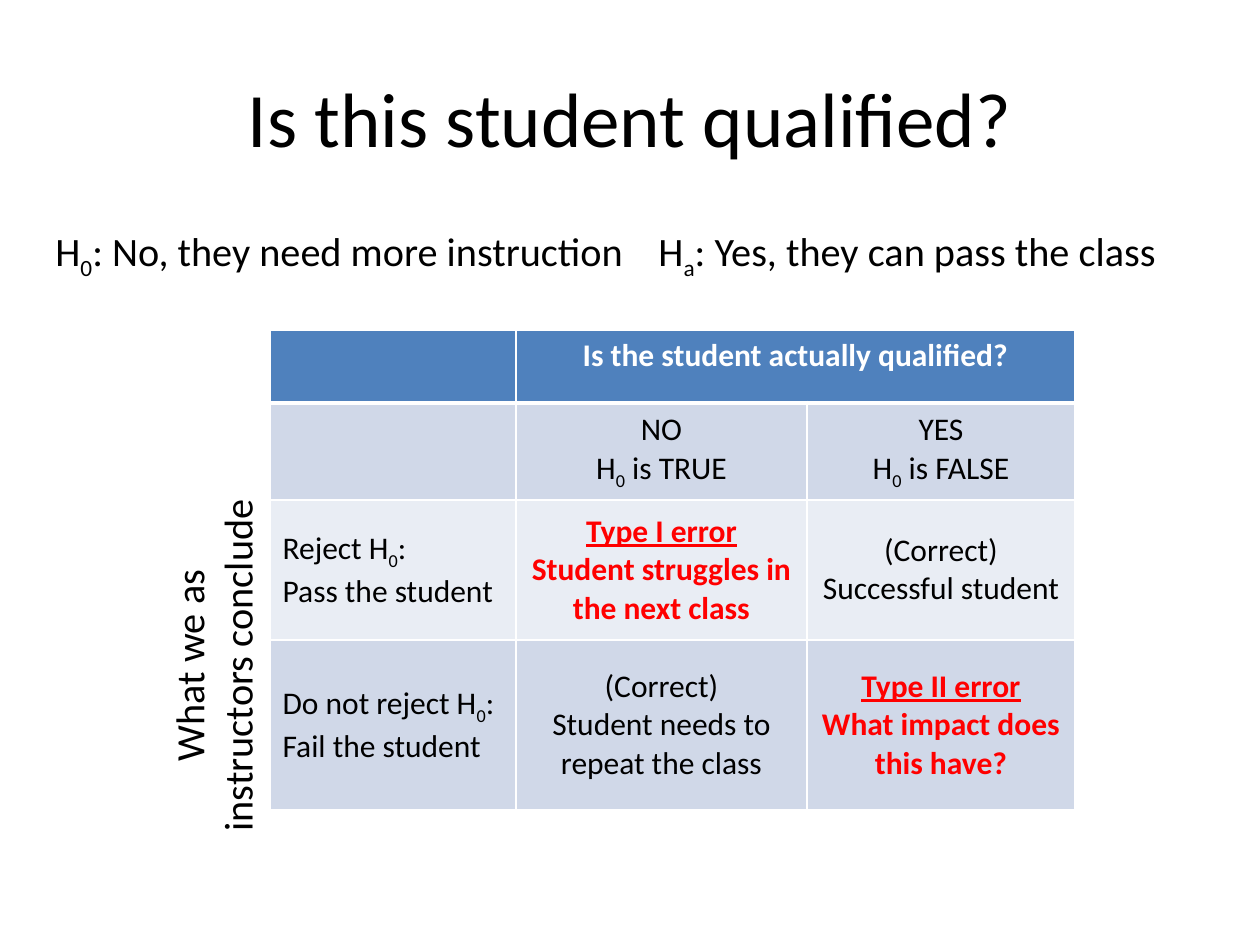
from dataclasses import dataclass

from lxml.etree import SubElement
from pptx import Presentation
from pptx.dml.color import RGBColor
from pptx.enum.text import MSO_ANCHOR as Anchor, MSO_AUTO_SIZE as AutoSize, PP_ALIGN as Align
from pptx.oxml.ns import qn
from pptx.util import Emu, Pt

PX_PER_INCH = 126
FONT = "Calibri"
BLACK, WHITE, RED = "000000", "FFFFFF", "FF0000"
HEADER_BLUE, BAND_DARK, BAND_LIGHT = "4F81BD", "D0D8E8", "E9EDF4"


@dataclass(frozen=True)
class Run:
    text: str
    color: str = BLACK
    bold: bool = False
    underline: bool = False
    subscript: bool = False


@dataclass(frozen=True)
class Label:
    left: int
    top: int
    width: int
    height: int
    runs: list[Run]
    align: Align = Align.LEFT
    rotation: int = 0


def px(length: int) -> Emu:
    return Emu(round(length * 914400 / PX_PER_INCH))


def rgb(color: str) -> RGBColor:
    return RGBColor.from_string(color)


def hypothesis(before: str, index: str, after: str) -> list[Run]:
    return [Run(before), Run(index, subscript=True), Run(after)]


def plain(*lines: str) -> list[list[Run]]:
    return [[Run(line)] for line in lines]


def error(name: str, effect: str) -> list[list[Run]]:
    return [[Run(name, RED, bold=True, underline=True)], [Run(effect, RED, bold=True)]]


def write(text_frame, lines: list[list[Run]], size: int, align: Align) -> None:
    for index, runs in enumerate(lines):
        paragraph = text_frame.add_paragraph() if index else text_frame.paragraphs[0]
        paragraph.alignment = align
        for item in runs:
            run = paragraph.add_run()
            run.text = item.text
            font = run.font
            font.name, font.size = FONT, Pt(size)
            font.bold, font.underline = item.bold, item.underline
            font.color.rgb = rgb(item.color)
            if item.subscript:
                run._r.get_or_add_rPr().set("baseline", "-25000")


def add_label(slide, label: Label) -> None:
    shape = slide.shapes.add_textbox(
        px(label.left), px(label.top), px(label.width), px(label.height))
    shape.rotation = label.rotation
    shape.text_frame.word_wrap = True
    shape.text_frame.auto_size = AutoSize.SHAPE_TO_FIT_TEXT
    write(shape.text_frame, [label.runs], 23, label.align)


def add_border(cell, side: str, points: int) -> None:
    line = SubElement(cell._tc.get_or_add_tcPr(), qn(f"a:ln{side}"), w=str(Pt(points)))
    fill = SubElement(line, qn("a:solidFill"))
    SubElement(fill, qn("a:srgbClr"), val=WHITE)


def format_cell(cell, row: int, fill: str) -> None:
    """Draw the borders first, as the schema puts them before the fill."""
    for side in "LRTB":
        heavy = (row, side) in ((0, "B"), (1, "T"))
        add_border(cell, side, 3 if heavy else 1)
    cell.fill.solid()
    cell.fill.fore_color.rgb = rgb(fill)
    cell.vertical_anchor = Anchor.MIDDLE if row else Anchor.TOP


COLUMN_WIDTHS = [246, 291, 268]
ROW_HEIGHTS = [73, 97, 140, 170]
ROW_FILLS = [HEADER_BLUE, BAND_DARK, BAND_LIGHT, BAND_DARK]
CELLS = [
    [[], [[Run("Is the student actually qualified?", WHITE, bold=True)]], []],
    [[],
     plain("NO") + [hypothesis("H", "0", " is TRUE")],
     plain("YES") + [hypothesis("H", "0", " is FALSE")]],
    [[hypothesis("Reject H", "0", ":")] + plain("Pass the student"),
     error("Type I error", "Student struggles in the next class"),
     plain("(Correct)", "Successful student")],
    [[hypothesis("Do not reject H", "0", ":")] + plain("Fail the student"),
     plain("(Correct)", "Student needs to repeat the class"),
     error("Type II error", "What impact does this have?")],
]
LABELS = [
    Label(43, 220, 602, 62, hypothesis("H", "0", ": No, they need more instruction")),
    Label(646, 220, 536, 62, hypothesis("H", "a", ": Yes, they can pass the class")),
    Label(24, 610, 379, 111, [Run("What we as instructors conclude")], Align.CENTER, 270),
]


def add_error_table(slide) -> None:
    table = slide.shapes.add_table(
        len(ROW_HEIGHTS), len(COLUMN_WIDTHS), px(270), px(330),
        px(sum(COLUMN_WIDTHS)), px(sum(ROW_HEIGHTS))).table
    table.horz_banding = False
    for column, width in zip(table.columns, COLUMN_WIDTHS):
        column.width = px(width)
    for row, height in zip(table.rows, ROW_HEIGHTS):
        row.height = px(height)
    table.cell(0, 1).merge(table.cell(0, 2))
    for row, contents in enumerate(CELLS):
        for column, lines in enumerate(contents):
            cell = table.cell(row, column)
            format_cell(cell, row, ROW_FILLS[row])
            write(cell.text_frame, lines, 18, Align.CENTER if column else Align.LEFT)


def main() -> None:
    presentation = Presentation()
    presentation.slide_width, presentation.slide_height = px(1260), px(945)
    slide = presentation.slides.add_slide(presentation.slide_layouts[5])

    title = slide.shapes.title
    title.left, title.top, title.width, title.height = px(63), px(38), px(1134), px(158)
    title.text_frame.vertical_anchor = Anchor.MIDDLE
    write(title.text_frame, plain("Is this student qualified?"), 44, Align.CENTER)

    add_error_table(slide)
    for label in LABELS:
        add_label(slide, label)
    presentation.save("out.pptx")


if __name__ == "__main__":
    main()
